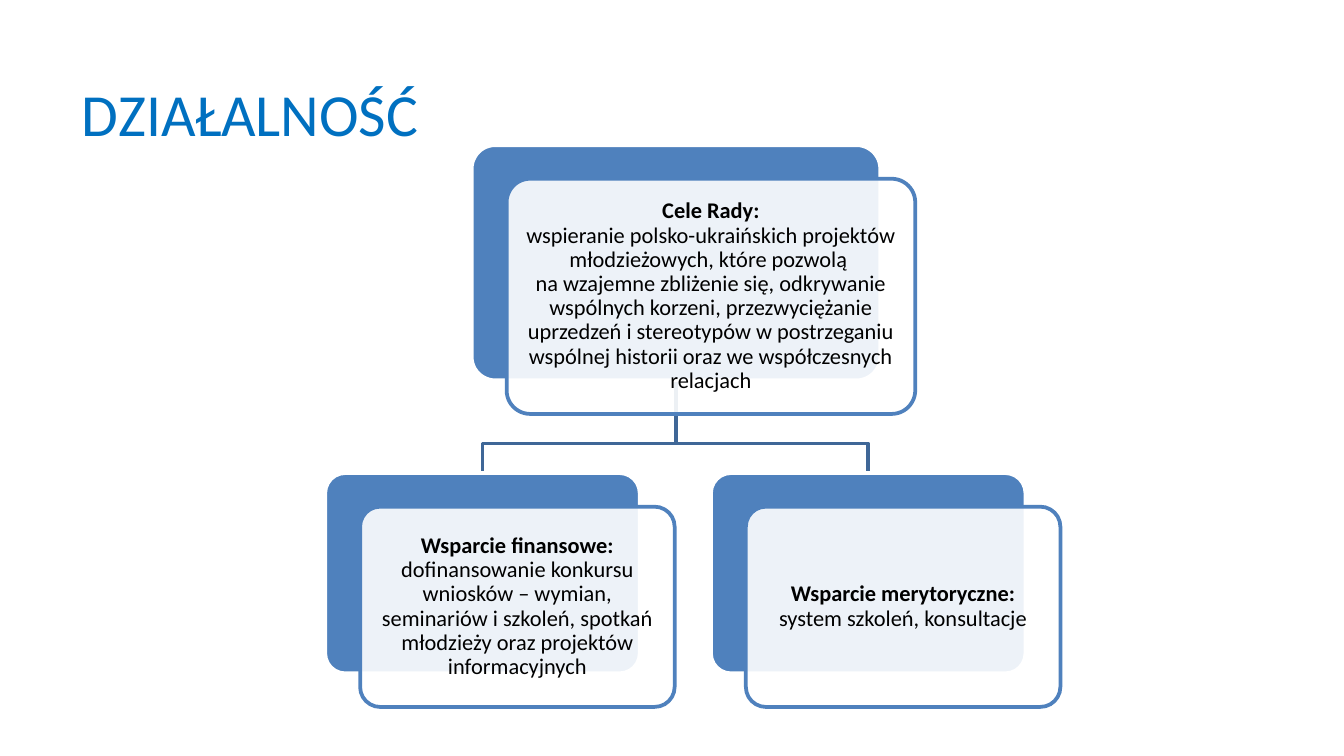
from typing import NamedTuple

from lxml import etree
from pptx import Presentation
from pptx.dml.color import RGBColor
from pptx.enum import shapes, text
from pptx.oxml.ns import qn
from pptx.util import Inches, Pt

BLUE = RGBColor(0x4F, 0x81, 0xBD)
DARK_BLUE = RGBColor(0x3F, 0x67, 0x97)
TITLE_BLUE = RGBColor(0x00, 0x70, 0xC0)
WHITE = RGBColor(0xFF, 0xFF, 0xFF)
BLACK = RGBColor(0x00, 0x00, 0x00)
FONT = "Calibri"
CARD_DX, CARD_DY = 0.26, 0.25  # shift of the front card from its backing
CARD_OPACITY = 90


class Box(NamedTuple):
    left: float
    top: float
    width: float
    height: float
    heading: str
    body: str

    @property
    def center(self) -> float:
        return self.left + self.width / 2


GOALS = Box(
    3.51, 1.08, 3.04, 1.75, "Cele Rady:\n",
    "wspieranie polsko-ukraińskich projektów młodzieżowych, które pozwolą \n"
    "na wzajemne zbliżenie się, odkrywanie wspólnych korzeni, przezwyciężanie "
    "uprzedzeń i stereotypów w postrzeganiu wspólnej historii oraz we "
    "współczesnych relacjach")
SUPPORT = [
    Box(2.42, 3.52, 2.34, 1.49, "Wsparcie finansowe: ",
        "dofinansowanie konkursu wniosków – wymian, seminariów i szkoleń, "
        "spotkań młodzieży oraz projektów informacyjnych"),
    Box(5.29, 3.52, 2.34, 1.49, "Wsparcie merytoryczne: ",
        "system szkoleń, konsultacje"),
]


def add_panel(slide, box: Box, dx: float, dy: float, fill: RGBColor, line: RGBColor):
    panel = slide.shapes.add_shape(
        shapes.MSO_SHAPE.ROUNDED_RECTANGLE, Inches(box.left + dx),
        Inches(box.top + dy), Inches(box.width), Inches(box.height))
    panel.adjustments[0] = 0.1
    panel.shadow.inherit = False
    panel.fill.solid()
    panel.fill.fore_color.rgb = fill
    panel.line.color.rgb = line
    panel.line.width = Pt(2)
    return panel


def add_runs(paragraph, wording: str, bold: bool) -> None:
    for index, line in enumerate(wording.split("\n")):
        if index:
            paragraph.add_line_break()
        if line:
            run = paragraph.add_run()
            run.text = line
            run.font.bold = bold


def add_box(slide, box: Box) -> None:
    add_panel(slide, box, 0, 0, BLUE, WHITE)
    card = add_panel(slide, box, CARD_DX, CARD_DY, WHITE, BLUE)
    color = card.element.spPr.find(qn("a:solidFill"))[0]
    etree.SubElement(color, qn("a:alpha")).set("val", str(CARD_OPACITY * 1000))

    frame = card.text_frame
    frame.word_wrap = True
    frame.vertical_anchor = text.MSO_ANCHOR.MIDDLE
    frame.margin_left = frame.margin_right = Inches(0.05)
    frame.margin_top = frame.margin_bottom = Inches(0.05)
    paragraph = frame.paragraphs[0]
    paragraph.alignment = text.PP_ALIGN.CENTER
    paragraph.line_spacing = 0.9
    paragraph.font.name = FONT
    paragraph.font.size = Pt(12)
    paragraph.font.color.rgb = BLACK
    add_runs(paragraph, box.heading, True)
    add_runs(paragraph, box.body, False)


def add_branch(slide, parent: Box, child: Box) -> None:
    bottom, bend = parent.top + parent.height, 3.3
    corners = [(parent.center, bend), (child.center, bend), (child.center, child.top)]
    builder = slide.shapes.build_freeform(Inches(parent.center), Inches(bottom))
    builder.add_line_segments([(Inches(x), Inches(y)) for x, y in corners], close=False)
    branch = builder.convert_to_shape()
    branch.shadow.inherit = False
    branch.fill.background()
    branch.line.color.rgb = DARK_BLUE
    branch.line.width = Pt(2)


def main() -> None:
    # Widescreen slide, 16:9
    prs = Presentation()
    prs.slide_width = Inches(10)
    prs.slide_height = prs.slide_width * 9 // 16
    slide = prs.slides.add_slide(prs.slide_layouts[5])

    # Title
    title = slide.shapes.title
    title.left, title.top = Inches(0.51), Inches(0.37)
    title.width, title.height = Inches(9), Inches(0.94)
    title.text_frame.text = "DZIAŁALNOŚĆ"
    title.text_frame.vertical_anchor = text.MSO_ANCHOR.MIDDLE
    heading = title.text_frame.paragraphs[0]
    heading.alignment = text.PP_ALIGN.LEFT
    heading.font.name = FONT
    heading.font.size = Pt(32)
    heading.font.color.rgb = TITLE_BLUE

    # Branches lie behind the boxes
    for support in reversed(SUPPORT):
        add_branch(slide, GOALS, support)

    # Goals and the two kinds of support
    for box in [GOALS, *SUPPORT]:
        add_box(slide, box)

    prs.save("out.pptx")


if __name__ == "__main__":
    main()
